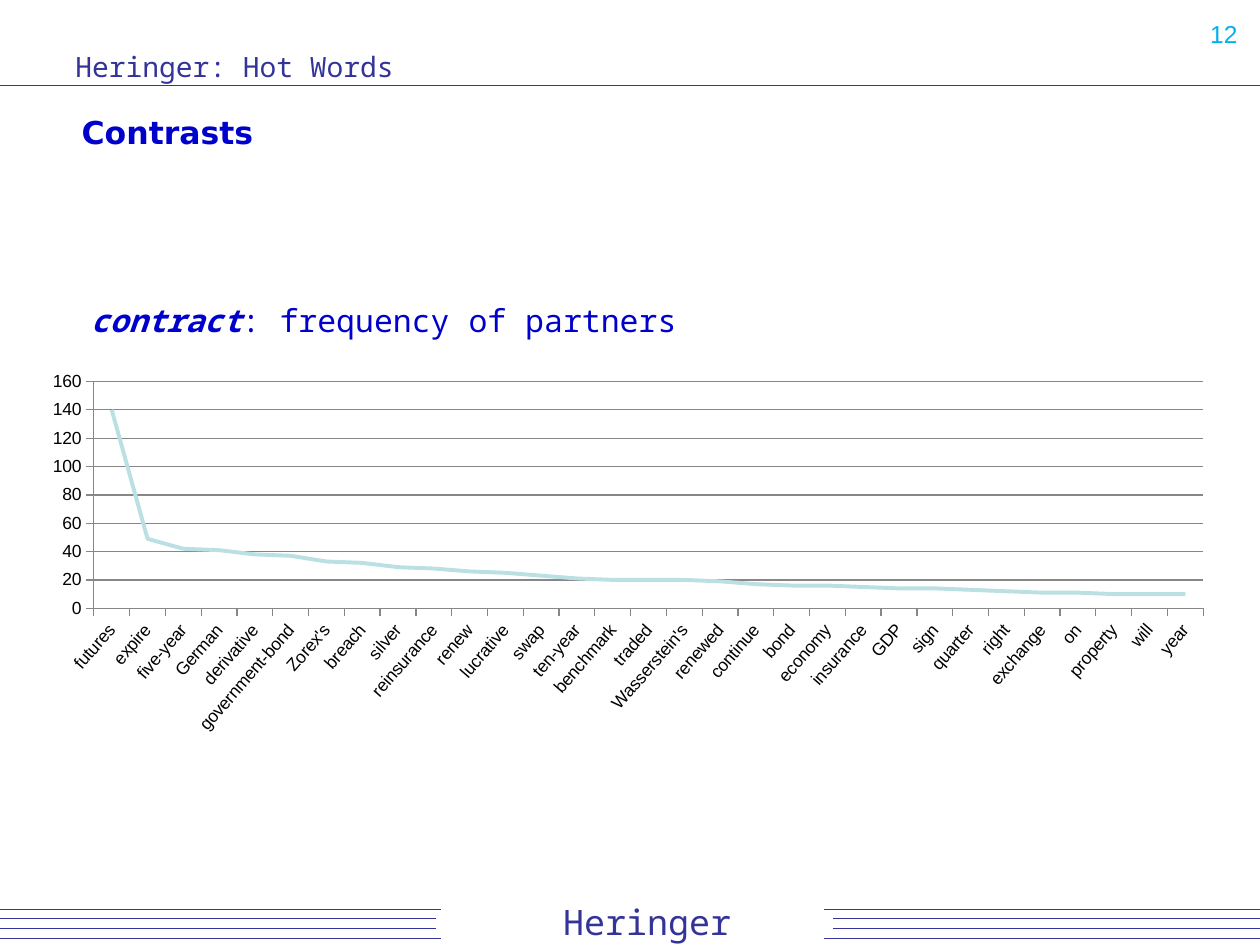
from lxml.etree import SubElement
from pptx import Presentation
from pptx.chart.data import CategoryChartData
from pptx.dml.color import RGBColor
from pptx.enum.chart import XL_CHART_TYPE, XL_TICK_MARK
from pptx.enum.shapes import MSO_CONNECTOR
from pptx.enum.text import MSO_ANCHOR, MSO_AUTO_SIZE, PP_ALIGN
from pptx.oxml.ns import qn
from pptx.util import Inches, Pt

COLORS = {"navy": "333399", "blue": "0000CC", "sky": "00B0F0",
          "pale": "BBE0E3", "grey": "878787", "black": "000000"}
MONO, SANS, PLAIN = "Noto Sans Mono", "DejaVu Sans", "Arial"
GROW = {"auto_size": MSO_AUTO_SIZE.SHAPE_TO_FIT_TEXT}
TIGHT = GROW | {"word_wrap": False}

PARTNERS = {
    "futures": 140, "expire": 49, "five-year": 42, "German": 41,
    "derivative": 38, "government-bond": 37, "Zorex's": 33, "breach": 32,
    "silver": 29, "reinsurance": 28, "renew": 26, "lucrative": 25,
    "swap": 23, "ten-year": 21, "benchmark": 20, "traded": 20,
    "Wasserstein's": 20, "renewed": 19, "continue": 17, "bond": 16,
    "economy": 16, "insurance": 15, "GDP": 14, "sign": 14, "quarter": 13,
    "right": 12, "exchange": 11, "on": 11, "property": 10, "will": 10,
    "year": 10,
}


def assign(item, values):
    for name, value in values.items():
        setattr(item, name, value)


def rgb(name):
    return RGBColor.from_string(COLORS[name])


class Deck:
    """Places elements on a grid of 100 columns by 75 rows."""

    def __init__(self):
        self.prs = Presentation()
        assign(self.prs, {"slide_width": Inches(10), "slide_height": Inches(7.5)})
        self.slide = self.prs.slides.add_slide(self.prs.slide_layouts[6])
        self.col = self.prs.slide_width / 100
        self.row = self.prs.slide_height / 75

    def grid(self, *cells):
        """Turns alternating columns and rows into lengths."""
        units = (self.col, self.row) * 2
        return [round(cell * unit) for cell, unit in zip(cells, units)]

    def pen(self, line, color, width):
        line.color.rgb = rgb(color)
        line.width = Pt(width)

    def rule(self, left, top, width):
        ends = self.grid(left, top, left + width, top)
        rule = self.slide.shapes.add_connector(MSO_CONNECTOR.STRAIGHT, *ends)
        self.pen(rule.line, "navy", 0.25)
        SubElement(rule._element.spPr, qn("a:effectLst"))

    def text(self, box, runs, size, font, color, frame=None, align=PP_ALIGN.LEFT):
        """Writes one paragraph of (words, font format) runs."""
        shape = self.slide.shapes.add_textbox(*self.grid(*box))
        assign(shape.text_frame, {"word_wrap": True} | (frame or {}))
        para = shape.text_frame.paragraphs[0]
        para.alignment = align
        for words, style in runs:
            run = para.add_run()
            run.text = words
            assign(run.font, {"size": Pt(size), "name": font} | style)
            run.font.color.rgb = rgb(color)

    def chart(self, box, values):
        data = CategoryChartData()
        data.categories = list(values)
        data.add_series("Series 1", list(values.values()))
        chart = self.slide.shapes.add_chart(
            XL_CHART_TYPE.LINE, *self.grid(*box), data).chart
        assign(chart, {"has_legend": False, "has_title": False})
        assign(chart.font, {"size": Pt(10), "name": PLAIN})
        chart.font.color.rgb = rgb("black")
        chart.plots[0].vary_by_categories = False
        series = chart.plots[0].series[0]
        series.smooth = False
        self.pen(series.format.line, "pale", 2.25)
        for axis in (chart.category_axis, chart.value_axis):
            axis.major_tick_mark = XL_TICK_MARK.OUTSIDE
            self.pen(axis.format.line, "grey", 0.75)
        assign(chart.value_axis, {"minimum_scale": 0, "maximum_scale": 160,
                                  "major_unit": 20, "has_major_gridlines": True})
        self.pen(chart.value_axis.major_gridlines.format.line, "grey", 0.75)
        assign(chart.category_axis.tick_labels.font, {"size": Pt(10), "name": PLAIN})
        body = chart.category_axis._element.find(qn("c:txPr")).find(qn("a:bodyPr"))
        body.set("rot", str(-49 * 60000))


def main():
    deck = Deck()
    deck.rule(0, 6.8, 100)
    for outer, inner in ((0, -0.4), (65.4, 66.1)):
        for left, top in zip((outer, inner, inner, outer), (72.2, 72.9, 73.7, 74.5)):
            deck.rule(left, top, 35)
    deck.text((43.7, 71, 29.1, 4.3), [("Heringer", {})], 20, MONO, "navy", GROW)
    deck.text((5, 3, 90, 4.6), [("Heringer: Hot Words", {})], 16, MONO, "navy",
              {"vertical_anchor": MSO_ANCHOR.MIDDLE})
    deck.chart((2.3, 28.9, 95.1, 30), PARTNERS)
    deck.text((6.2, 23.4, 50.8, 4),
              [("contract", {"bold": True, "italic": True}),
               (": frequency of partners", {})], 18, MONO, "blue", TIGHT)
    deck.text((75.9, 1, 23.3, 5.2), [("12", {})], 14, PLAIN, "sky",
              align=PP_ALIGN.RIGHT)
    deck.text((5.5, 8.5, 15.6, 4), [("Contrasts", {"bold": True})], 18, SANS,
              "blue", TIGHT)
    deck.prs.save("out.pptx")


if __name__ == "__main__":
    main()
